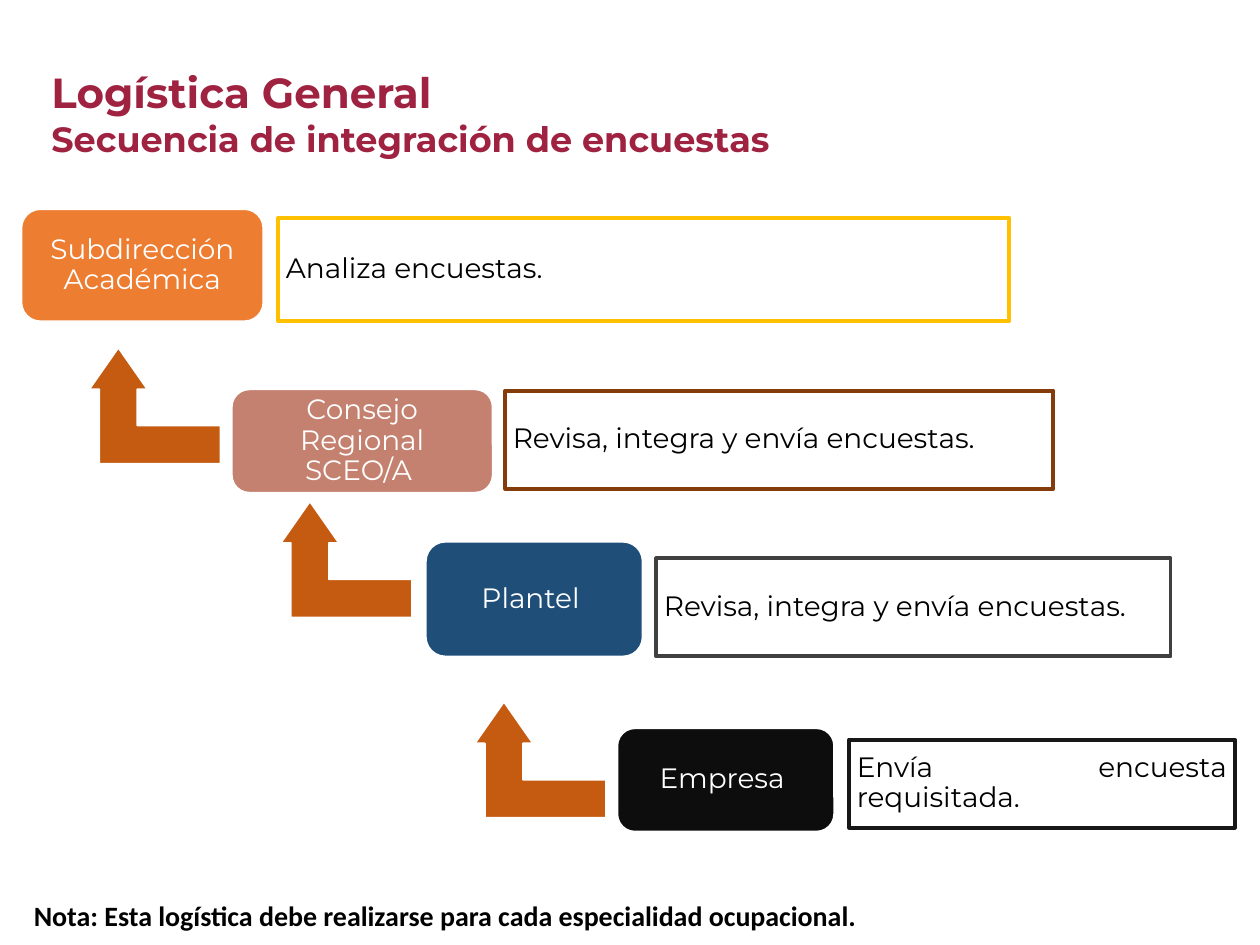
import pptx
import pptx.util
import pptx.dml.color
import pptx.enum.shapes
import pptx.enum.text

Inches = pptx.util.Inches
Pt = pptx.util.Pt
RGBColor = pptx.dml.color.RGBColor
Shape = pptx.enum.shapes.MSO_SHAPE
Align = pptx.enum.text.PP_ALIGN
Anchor = pptx.enum.text.MSO_ANCHOR

WINE = RGBColor(0x9F, 0x22, 0x41)
RUST = RGBColor(0xC5, 0x5A, 0x11)
ORANGE = RGBColor(0xED, 0x7D, 0x31)
GOLD = RGBColor(0xFF, 0xC0, 0x00)
ROSE = RGBColor(0xC4, 0x81, 0x70)
BROWN = RGBColor(0x84, 0x3C, 0x0B)
BLUE = RGBColor(0x1F, 0x4E, 0x79)
GRAY = RGBColor(0x40, 0x40, 0x40)
COAL = RGBColor(0x0D, 0x0D, 0x0D)
INK = RGBColor(0x18, 0x17, 0x17)
BLACK = RGBColor(0, 0, 0)
WHITE = RGBColor(0xFF, 0xFF, 0xFF)

STEPS = [
    ("Subdirección Académica", (0.17, 1.66, 1.92, 0.89), ORANGE,
     "Analiza encuestas.", (2.04, 0.07, 5.8, 0.82), GOLD),
    ("Consejo Regional SCEO/A ", (1.84, 3.09, 2.07, 0.82), ROSE,
     "Revisa, integra y envía encuestas.", (2.17, 0.01, 4.35, 0.78), BROWN),
    ("Plantel ", (3.38, 4.3, 1.72, 0.91), BLUE,
     "Revisa, integra y envía encuestas.", (1.83, 0.13, 4.08, 0.78), GRAY),
    ("Empresa ", (4.9, 5.78, 1.72, 0.82), COAL,
     "Envía encuesta requisitada. ", (1.84, 0.09, 3.06, 0.7), INK),
]
ARROWS = [(0.71, 2.76), (2.23, 3.98), (3.77, 5.57)]


def style(para, size, color, name="Montserrat", bold=False):
    """Set the font of a paragraph."""
    font = para.font
    font.name, font.size, font.bold = name, Pt(size), bold
    font.color.rgb = color


def add_shape(slide, kind, box, fill, line, width):
    """Add a flat shape with the given fill and outline."""
    shape = slide.shapes.add_shape(kind, *map(Inches, box))
    shape.shadow.inherit = False
    if fill is None:
        shape.fill.background()
    else:
        shape.fill.solid()
        shape.fill.fore_color.rgb = fill
    shape.line.color.rgb = line
    shape.line.width = Pt(width)
    return shape


def write(shape, text, color, align, inset):
    """Put one paragraph in the middle of a shape."""
    frame = shape.text_frame
    frame.word_wrap = True
    frame.vertical_anchor = Anchor.MIDDLE
    frame.margin_left = frame.margin_right = Inches(inset)
    frame.margin_top = frame.margin_bottom = Inches(inset)
    para = frame.paragraphs[0]
    para.text = text
    para.alignment = align
    para.line_spacing = 0.9
    style(para, 16, color)


def add_step(slide, box, role, fill, task, offset, edge):
    """Add a role block and the task frame to its right."""
    block = add_shape(slide, Shape.ROUNDED_RECTANGLE, box, fill, WHITE, 1)
    block.adjustments[0] = 0.17
    write(block, role, WHITE, Align.CENTER, 0.06)
    left, top = box[:2]
    right, down, width, height = offset
    place = (left + right, top + down, width, height)
    frame = add_shape(slide, Shape.RECTANGLE, place, None, edge, 2.25)
    write(frame, task, BLACK, Align.JUSTIFY, 0.06)


def add_arrow(slide, left, top):
    """Add an arrow that bends up to the previous step."""
    box = (left, top, 1.04, 0.92)
    arrow = add_shape(slide, Shape.BENT_UP_ARROW, box, RUST, WHITE, 1)
    for spot, value in enumerate((0.328, 0.25, 0.358)):
        arrow.adjustments[spot] = value
    arrow._element.spPr.xfrm.set("flipH", "1")


def add_text(slide, box, lines, color, name):
    """Add a text box of bold lines, each with its size."""
    frame = slide.shapes.add_textbox(*map(Inches, box)).text_frame
    frame.word_wrap = True
    for spot, (text, size) in enumerate(lines):
        para = frame.add_paragraph() if spot else frame.paragraphs[0]
        para.text = text
        style(para, size, color, name, True)


def main():
    """Build and save the slide."""
    deck = pptx.Presentation()
    deck.slide_width, deck.slide_height = Inches(10), Inches(7.5)
    slide = deck.slides.add_slide(deck.slide_layouts[6])
    title = [("Logística General", 24),
             ("Secuencia de integración de encuestas", 20)]
    add_text(slide, (0.31, 0.48, 6.14, 0.84), title, WINE, "Montserrat")
    for role, box, fill, task, offset, edge in STEPS:
        add_step(slide, box, role, fill, task, offset, edge)
    for left, top in ARROWS:
        add_arrow(slide, left, top)
    note = "Nota: Esta logística debe realizarse para cada especialidad ocupacional."
    add_text(slide, (0.17, 7.08, 8.89, 0.37), [(note, 16)], BLACK, "Calibri")
    deck.save("out.pptx")


if __name__ == "__main__":
    main()
